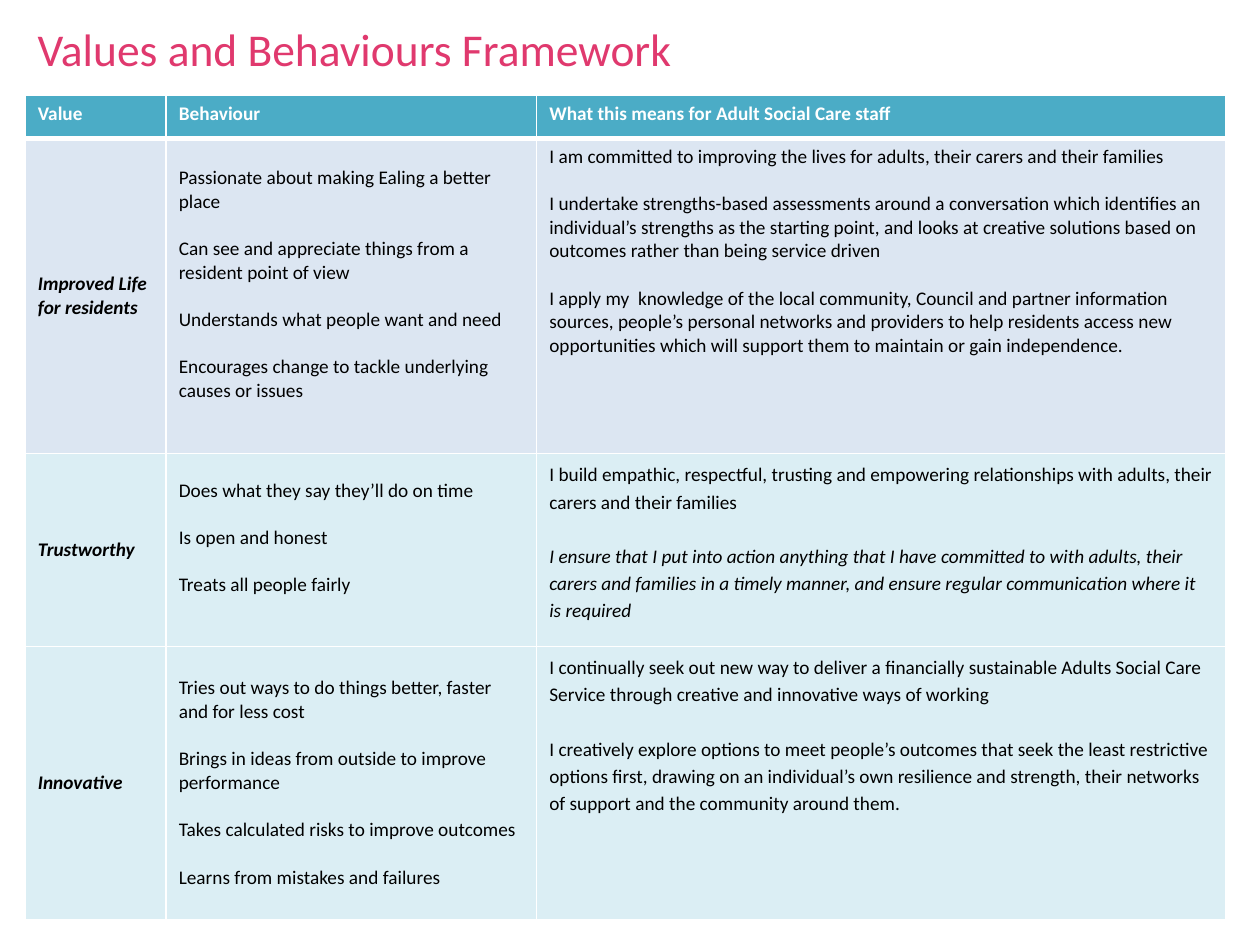
from dataclasses import dataclass

from lxml.etree import SubElement
from pptx import Presentation
from pptx.dml.color import RGBColor
from pptx.enum.text import MSO_ANCHOR
from pptx.oxml.ns import qn
from pptx.util import Cm, Pt


@dataclass(frozen=True)
class Theme:
    font: str = "Calibri"
    title_size: float = 26
    body_size: float = 11
    title: str = "E0396E"
    header: str = "4BACC6"
    blue_row: str = "DCE6F2"
    aqua_row: str = "DBEEF4"
    text: str = "000000"
    white: str = "FFFFFF"


@dataclass(frozen=True)
class ValueRow:
    value: str
    behaviours: tuple
    meanings: tuple
    height: float
    fill: str
    line_spacing: float = 1.0
    lift: float = 0  # extra space in points below the behaviours
    italic_meanings: tuple = ()


THEME = Theme()
LINE_GAP = 13.4  # one line of body text, in points
COLUMN_WIDTHS = (2.84, 7.47, 13.89)
HEADER_HEIGHT = 0.86
HEADINGS = ("Value", "Behaviour", "What this means for Adult Social Care staff")

VALUE_ROWS = (
    ValueRow(
        "Improved Life for residents",
        ("Passionate about making Ealing a better place",
         "Can see and appreciate things from a resident point of view",
         "Understands what people want and need",
         "Encourages change to tackle underlying causes or issues"),
        ("I am committed to improving the lives for adults, their carers and their families",
         "I undertake strengths-based assessments around a conversation which identifies an "
         "individual’s strengths as the starting point, and looks at creative solutions based on "
         "outcomes rather than being service driven",
         "I apply my  knowledge of the local community, Council and partner information sources, "
         "people’s personal networks and providers to help residents access new opportunities "
         "which will support them to maintain or gain independence."),
        height=6.35, fill=THEME.blue_row, lift=LINE_GAP),
    ValueRow(
        "Trustworthy",
        ("Does what they say they’ll do on time",
         "Is open and honest",
         "Treats all people fairly"),
        ("I build empathic, respectful, trusting and empowering relationships with adults, "
         "their carers and their families",
         "I ensure that I put into action anything that I have committed to with adults, their "
         "carers and families in a timely manner, and ensure regular communication where it is "
         "required"),
        height=3.89, fill=THEME.aqua_row, line_spacing=1.15, lift=LINE_GAP,
        italic_meanings=(1,)),
    ValueRow(
        "Innovative",
        ("Tries out ways to do things better, faster and for less cost",
         "Brings in ideas from outside to improve performance",
         "Takes calculated risks to improve outcomes",
         "Learns from mistakes and failures"),
        ("I continually seek out new way to deliver a financially sustainable Adults Social Care "
         "Service through creative and innovative ways of working",
         "I creatively explore options to meet people’s outcomes that seek the least restrictive "
         "options first, drawing on an individual’s own resilience and strength, their networks "
         "of support and the community around them."),
        height=5.51, fill=THEME.aqua_row, line_spacing=1.15),
)


def write_text(frame, *texts, size=THEME.body_size, color=THEME.text, bold=False,
               italic=False, italic_items=(), line_spacing=1.0, gap=0):
    """Write one paragraph per text, with a gap in points between them."""
    frame.word_wrap = True
    for index, text in enumerate(texts):
        paragraph = frame.paragraphs[0] if index == 0 else frame.add_paragraph()
        paragraph.line_spacing = line_spacing
        paragraph.space_before = Pt(gap if index else 0)
        run = paragraph.add_run()
        run.text = text
        run.font.name = THEME.font
        run.font.size = Pt(size)
        run.font.bold = bold
        run.font.italic = italic or index in italic_items
        run.font.color.rgb = RGBColor.from_string(color)


def style_cell(cell, fill, top=1, bottom=1, anchor=MSO_ANCHOR.TOP):
    """Give a cell white borders (widths in points), a fill and an anchor."""
    properties = cell._tc.get_or_add_tcPr()
    for side, width in (("L", 1), ("R", 1), ("T", top), ("B", bottom)):
        border = SubElement(properties, qn(f"a:ln{side}"), w=str(Pt(width)))
        SubElement(SubElement(border, qn("a:solidFill")), qn("a:srgbClr"), val=THEME.white)
    cell.fill.solid()
    cell.fill.fore_color.rgb = RGBColor.from_string(fill)
    cell.vertical_anchor = anchor


def add_title(slide, left, top, width, height):
    frame = slide.shapes.add_textbox(Cm(left), Cm(top), Cm(width), Cm(height)).text_frame
    frame.margin_top = Cm(1.19)
    write_text(frame, "Values and Behaviours Framework",
               size=THEME.title_size, color=THEME.title, line_spacing=0.95)


def fill_value_row(cells, row, top_border):
    value, behaviour, meaning = cells
    for cell in (value, behaviour):
        style_cell(cell, row.fill, top=top_border, anchor=MSO_ANCHOR.MIDDLE)
    style_cell(meaning, row.fill, top=top_border)

    write_text(value.text_frame, row.value, bold=True, italic=True)
    write_text(behaviour.text_frame, *row.behaviours, gap=LINE_GAP)
    behaviour.margin_bottom = Cm(0.13) + Pt(row.lift)
    write_text(meaning.text_frame, *row.meanings, line_spacing=row.line_spacing,
               gap=LINE_GAP * row.line_spacing, italic_items=row.italic_meanings)


def add_framework_table(slide, left, top):
    heights = (HEADER_HEIGHT, *(row.height for row in VALUE_ROWS))
    table = slide.shapes.add_table(
        len(heights), len(COLUMN_WIDTHS), Cm(left), Cm(top),
        Cm(sum(COLUMN_WIDTHS)), Cm(sum(heights))).table
    for column, width in zip(table.columns, COLUMN_WIDTHS):
        column.width = Cm(width)
    for table_row, height in zip(table.rows, heights):
        table_row.height = Cm(height)

    # Header row, with a heavier rule beneath it
    for cell, heading in zip(table.rows[0].cells, HEADINGS):
        style_cell(cell, THEME.header, bottom=3)
        write_text(cell.text_frame, heading, color=THEME.white, bold=True)

    # One row for each value
    for index, row in enumerate(VALUE_ROWS, start=1):
        fill_value_row(table.rows[index].cells, row, top_border=3 if index == 1 else 1)


def main():
    presentation = Presentation()
    presentation.slide_width = Cm(25.4)
    presentation.slide_height = Cm(19.05)
    slide = presentation.slides.add_slide(presentation.slide_layouts[6])
    add_framework_table(slide, left=0.51, top=1.93)
    add_title(slide, left=0.51, top=-0.69, width=23.39, height=2.36)
    presentation.save("out.pptx")


if __name__ == "__main__":
    main()
